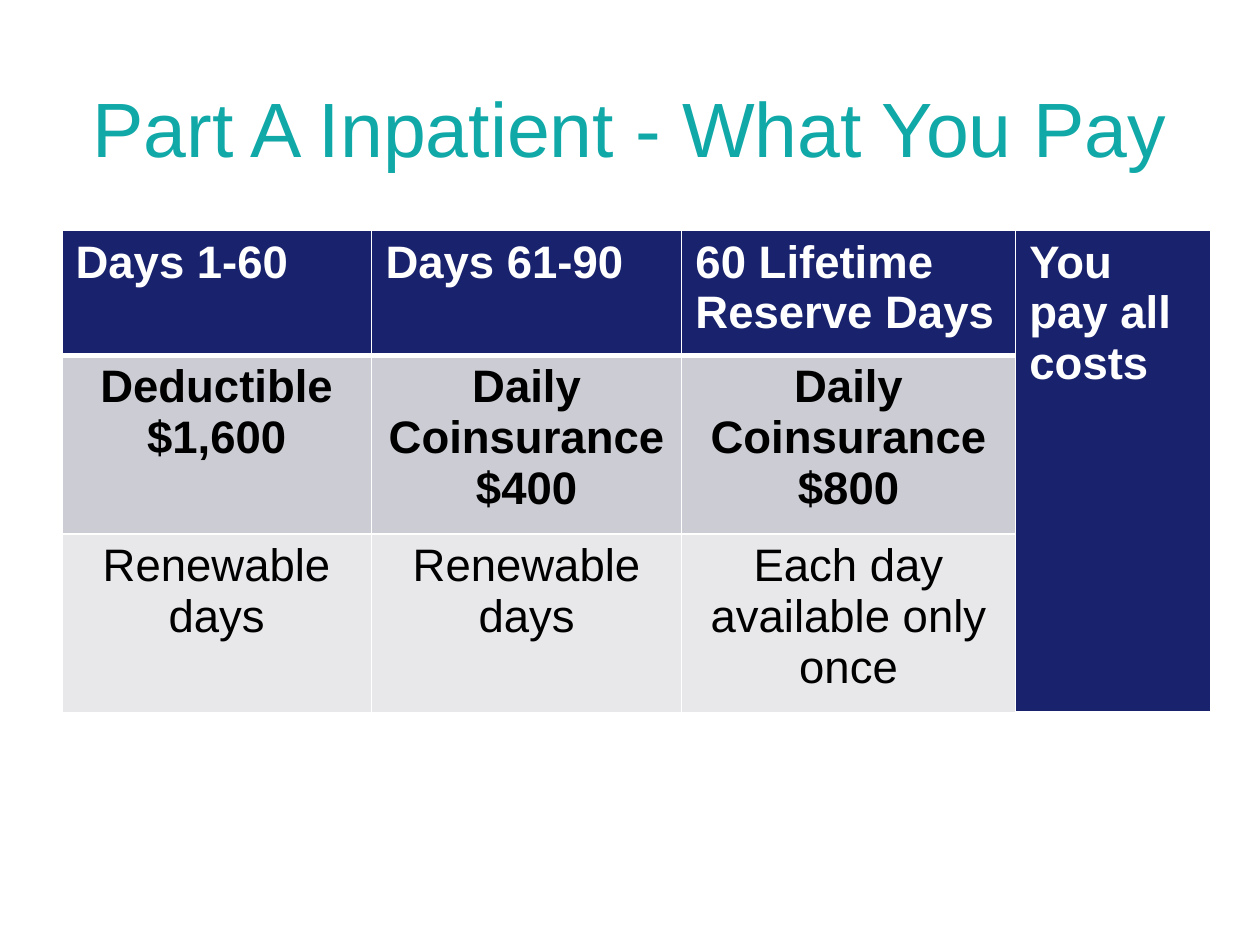
from lxml.etree import SubElement
from pptx import Presentation
from pptx.dml.color import RGBColor
from pptx.enum.text import MSO_ANCHOR, PP_ALIGN
from pptx.oxml.ns import qn
from pptx.util import Inches, Pt

WHITE, BLACK, NAVY, TEAL = "FFFFFF", "000000", "19226D", "11A8A8"
TITLE = [(" ", "TeX Gyre Schola"), ("Part A Inpatient - What You Pay", "Arial")]
COLUMN_WIDTHS = [2.46, 2.46, 2.65, 1.55]
ROWS = [
    dict(height=0.99, fill=NAVY, color=WHITE, bold=True, align=PP_ALIGN.LEFT,
         cells=[["Days 1-60"], ["Days 61-90"], ["60 Lifetime", "Reserve Days"],
                ["You", "pay all costs"]]),
    dict(height=1.42, fill="CCCDD4", color=BLACK, bold=True, align=PP_ALIGN.CENTER,
         cells=[["Deductible", "$1,600"], ["Daily", "Coinsurance", "$400"],
                ["Daily Coinsurance", "$800"]]),
    dict(height=1.42, fill="E8E8EB", color=BLACK, bold=False, align=PP_ALIGN.CENTER,
         cells=[["Renewable days"], ["Renewable days"],
                ["Each day available only once"]]),
]


def rgb(color):
    return RGBColor.from_string(color)


def add_span(para, text, font, size, color, bold=False):
    span = para.add_run()
    span.text = text
    span.font.name = font
    span.font.size = Pt(size)
    span.font.bold = bold
    span.font.color.rgb = rgb(color)


def set_borders(cell, **widths):
    """Draw white borders; widths are points by side, in the order L, R, T, B."""
    properties = cell._tc.get_or_add_tcPr()
    for side, width in widths.items():
        line = SubElement(properties, qn(f"a:ln{side}"), w=str(Pt(width)))
        fill = SubElement(line, qn("a:solidFill"))
        SubElement(fill, qn("a:srgbClr"), val=WHITE)


def add_title(page):
    title = page.shapes.title
    title.left, title.top = Inches(0.29), Inches(0.68)
    title.width, title.height = Inches(9.25), Inches(0.75)
    frame = title.text_frame
    frame.word_wrap = True
    frame.vertical_anchor = MSO_ANCHOR.MIDDLE
    para = frame.paragraphs[0]
    para.alignment = PP_ALIGN.CENTER
    para.line_spacing = 0.9
    for text, font in TITLE:
        add_span(para, text, font, 44, TEAL)


def fill_cell(cell, lines, row):
    cell.margin_left = cell.margin_right = Inches(0.11)
    cell.margin_top = cell.margin_bottom = Inches(0.05)
    frame = cell.text_frame
    for index, text in enumerate(lines):
        para = frame.add_paragraph() if index else frame.paragraphs[0]
        para.alignment = row["align"]
        add_span(para, text, "Arial", 26, row["color"], row["bold"])


def add_costs_table(page):
    table = page.shapes.add_table(
        len(ROWS), len(COLUMN_WIDTHS), Inches(0.49), Inches(1.83),
        Inches(sum(COLUMN_WIDTHS)), Inches(sum(row["height"] for row in ROWS))).table
    for column, width in zip(table.columns, COLUMN_WIDTHS):
        column.width = Inches(width)
    last = len(COLUMN_WIDTHS) - 1
    table.cell(0, last).merge(table.cell(len(ROWS) - 1, last))
    for r, row in enumerate(ROWS):
        table.rows[r].height = Inches(row["height"])
        for c in range(len(COLUMN_WIDTHS)):
            cell = table.cell(r, c)
            below_header = r == 1 and c < last
            set_borders(cell, L=1, R=1, T=3 if below_header else 1, B=1 if r else 3)
            cell.fill.solid()
            cell.fill.fore_color.rgb = rgb(NAVY if c == last else row["fill"])
            if c < len(row["cells"]):
                fill_cell(cell, row["cells"][c], row)


def main():
    deck = Presentation()
    deck.slide_width, deck.slide_height = Inches(10), Inches(7.5)
    page = deck.slides.add_slide(deck.slide_layouts[5])
    add_title(page)
    add_costs_table(page)
    deck.save("out.pptx")


if __name__ == "__main__":
    main()
